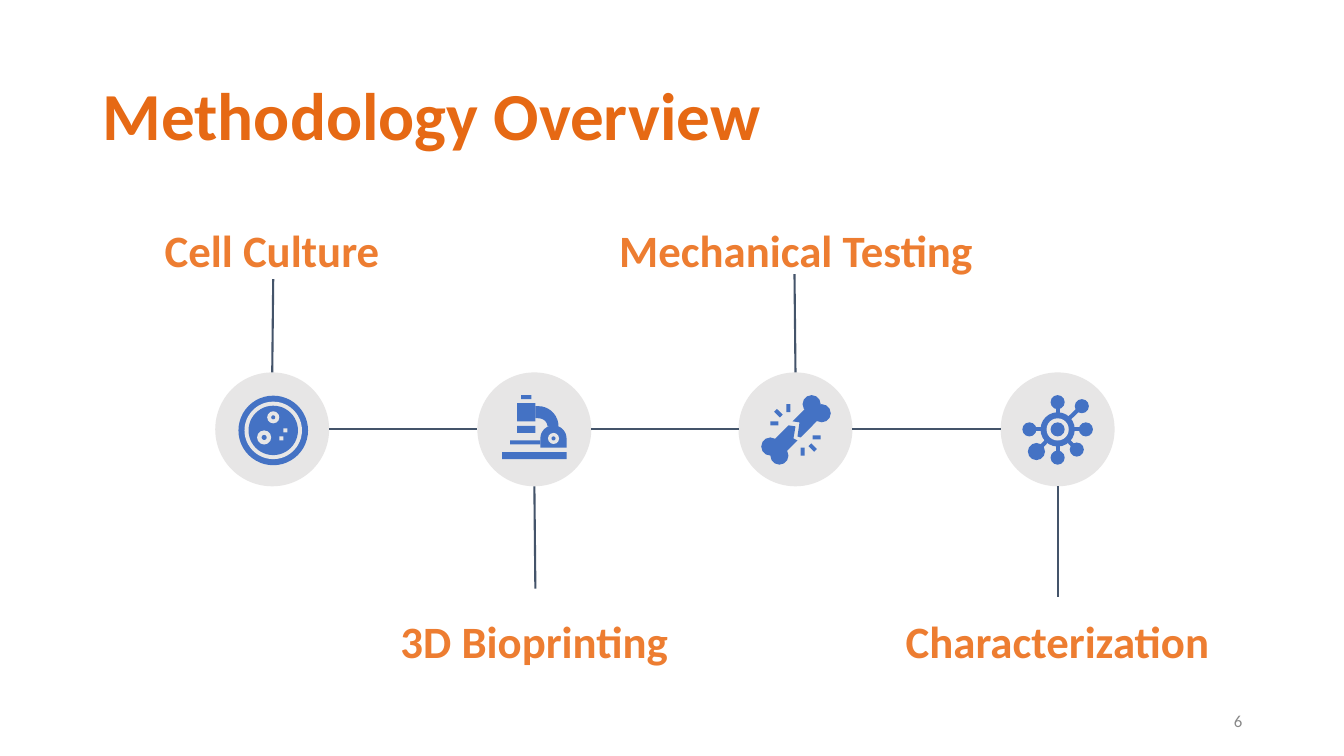
from math import cos, radians, sin

from lxml.etree import SubElement
from pptx import Presentation
from pptx.dml.color import RGBColor
from pptx.enum.shapes import MSO_CONNECTOR, MSO_SHAPE
from pptx.enum.text import MSO_ANCHOR, PP_ALIGN
from pptx.oxml.ns import qn
from pptx.util import Inches, Pt

TITLE_ORANGE = RGBColor(0xE6, 0x69, 0x14)
ORANGE = RGBColor(0xED, 0x7D, 0x31)
SLATE = RGBColor(0x44, 0x54, 0x6A)
PALE = RGBColor(0xE7, 0xE6, 0xE6)
BLUE = RGBColor(0x44, 0x72, 0xC4)
GREY = RGBColor(0x88, 0x88, 0x88)

deck = Presentation()
deck.slide_width, deck.slide_height = Inches(13.33), Inches(7.5)
page = deck.slides.add_slide(deck.slide_layouts[6])


def add_part(preset, x, y, width, height, color):
    """Add a plain filled shape centred on x, y."""
    part = page.shapes.add_shape(
        preset, Inches(x - width / 2), Inches(y - height / 2), Inches(width), Inches(height))
    part.shadow.inherit = False
    part.fill.solid()
    part.fill.fore_color.rgb = color
    part.line.fill.background()
    return part


def add_line(x1, y1, x2, y2, color, width):
    line = page.shapes.add_connector(
        MSO_CONNECTOR.STRAIGHT, Inches(x1), Inches(y1), Inches(x2), Inches(y2))
    line.line.color.rgb = color
    line.line.width = Pt(width)
    SubElement(line._element.spPr, qn("a:effectLst"))


# Title, step labels and page number
LEFT, CENTER, RIGHT = PP_ALIGN.LEFT, PP_ALIGN.CENTER, PP_ALIGN.RIGHT
TOP, MIDDLE = MSO_ANCHOR.TOP, MSO_ANCHOR.MIDDLE
texts = [
    ("Methodology Overview", 0.92, 0.4, 11.5, 1.45, 48, TITLE_ORANGE, True, LEFT, MIDDLE),
    ("Cell Culture", 0.76, 2.08, 3.88, 0.49, 32, ORANGE, True, CENTER, TOP),
    ("3D Bioprinting", 3.56, 5.96, 3.48, 0.49, 32, ORANGE, True, CENTER, TOP),
    ("Mechanical Testing", 5.55, 2.08, 4.69, 0.49, 32, ORANGE, True, CENTER, TOP),
    ("Characterization", 8.41, 5.96, 4.16, 0.49, 32, ORANGE, True, CENTER, TOP),
    ("6", 9.42, 6.95, 3, 0.4, 12, GREY, False, RIGHT, MIDDLE),
]
for text, left, top, width, height, size, color, bold, align, anchor in texts:
    box = page.shapes.add_textbox(Inches(left), Inches(top), Inches(width), Inches(height))
    frame = box.text_frame
    frame.word_wrap = True
    frame.vertical_anchor = anchor
    if anchor == TOP:
        frame.margin_left = frame.margin_right = Inches(0.13)
        frame.margin_top = frame.margin_bottom = Inches(0.13)
    para = frame.paragraphs[0]
    para.text = text
    para.alignment = align
    para.font.name = "Calibri"
    para.font.size = Pt(size)
    para.font.bold = bold
    para.font.color.rgb = color

# Timeline: circles, links between them and stems to the labels
AXIS, DIAMETER = 4.26, 1.13
RADIUS = DIAMETER / 2
centers = [2.7, 5.3, 7.89, 10.49]
stem_ends = [(2.71, 2.77), (5.31, 5.84), (7.88, 2.72), (10.49, 5.92)]
for center, (end_x, end_y) in zip(centers, stem_ends):
    add_part(MSO_SHAPE.OVAL, center, AXIS, DIAMETER, DIAMETER, PALE)
    edge = AXIS - RADIUS if end_y < AXIS else AXIS + RADIUS
    add_line(center, edge, end_x, end_y, SLATE, 1.5)
for start, end in zip(centers, centers[1:]):
    add_line(start + RADIUS, AXIS, end - RADIUS, AXIS, SLATE, 1.5)

# Solid outlines: microscope arm and foot, two halves of a broken bone
quarter = range(-90, 1, 10)
arm = [(5.34 + 0.2 * cos(radians(a)), 4.23 + 0.2 * sin(radians(a))) for a in quarter]
arm += [(5.34 + 0.09 * cos(radians(a)), 4.23 + 0.08 * sin(radians(a))) for a in reversed(quarter)]
arm += [(5.31, 4.15), (5.31, 4.03)]
foot = [(5.49 + 0.13 * cos(radians(a)), 4.35 + 0.13 * sin(radians(a))) for a in range(-180, 1, 10)]
foot += [(5.62, 4.44), (5.36, 4.44)]
lower_bone = [(7.82, 4.22), (7.64, 4.4), (7.76, 4.52), (7.91, 4.37), (7.87, 4.35), (7.89, 4.23)]
upper_bone = [(8.02, 4.02), (7.86, 4.18), (7.93, 4.19), (7.91, 4.33), (7.94, 4.34), (8.14, 4.14)]
for outline in (arm, foot, lower_bone, upper_bone):
    points = [(Inches(x), Inches(y)) for x, y in outline]
    builder = page.shapes.build_freeform(*points[0])
    builder.add_line_segments(points[1:], close=True)
    solid = builder.convert_to_shape()
    solid.shadow.inherit = False
    solid.fill.solid()
    solid.fill.fore_color.rgb = BLUE
    solid.line.fill.background()

# Network spokes
nodes = [(10.49, 3.99, 0.14), (10.73, 4.03, 0.14), (10.77, 4.26, 0.14), (10.68, 4.46, 0.14),
         (10.49, 4.54, 0.14), (10.28, 4.48, 0.17), (10.21, 4.26, 0.14)]
for x, y, size in nodes:
    add_line(10.49, AXIS, x, y, BLUE, 2.9)

# Round parts: x, y, diameter, color
dish = [(2.71, 4.27, 0.69, BLUE), (2.71, 4.27, 0.57, PALE), (2.71, 4.27, 0.49, BLUE),
        (2.71, 4.14, 0.12, PALE), (2.71, 4.14, 0.04, BLUE),
        (2.62, 4.34, 0.14, PALE), (2.62, 4.34, 0.05, BLUE)]
knob = [(5.49, 4.35, 0.11, PALE), (5.49, 4.35, 0.04, BLUE)]
bone_ends = [(x, y, 0.18, BLUE) for x, y in [(7.64, 4.43), (7.73, 4.52), (8.05, 4.01), (8.15, 4.1)]]
network = [(x, y, size, BLUE) for x, y, size in nodes]
network += [(10.49, AXIS, 0.34, BLUE), (10.49, AXIS, 0.22, PALE), (10.49, AXIS, 0.14, BLUE)]
for x, y, size, color in dish + knob + bone_ends + network:
    add_part(MSO_SHAPE.OVAL, x, y, size, size, color)

# Rectangular parts: x, y, width, height, color, rotation
dish_specks = [(2.83, 4.27, 0.04, 0.04, PALE, 0), (2.79, 4.35, 0.04, 0.04, PALE, 0)]
microscope = [(5.22, 3.94, 0.1, 0.04, BLUE, 0), (5.22, 4.09, 0.18, 0.18, BLUE, 0),
              (5.22, 4.26, 0.18, 0.07, BLUE, 0), (5.21, 4.39, 0.3, 0.04, BLUE, 0),
              (5.3, 4.52, 0.64, 0.07, BLUE, 0)]
sparks = [(x, y, 0.08, 0.04, BLUE, angle) for x, y, angle in [
    (7.68, 4.2, 0), (7.72, 4.1, 45), (7.82, 4.05, 90),
    (8.1, 4.34, 0), (8.06, 4.44, 45), (7.96, 4.48, 90)]]
for x, y, width, height, color, angle in dish_specks + microscope + sparks:
    add_part(MSO_SHAPE.RECTANGLE, x, y, width, height, color).rotation = angle

deck.save("out.pptx")
